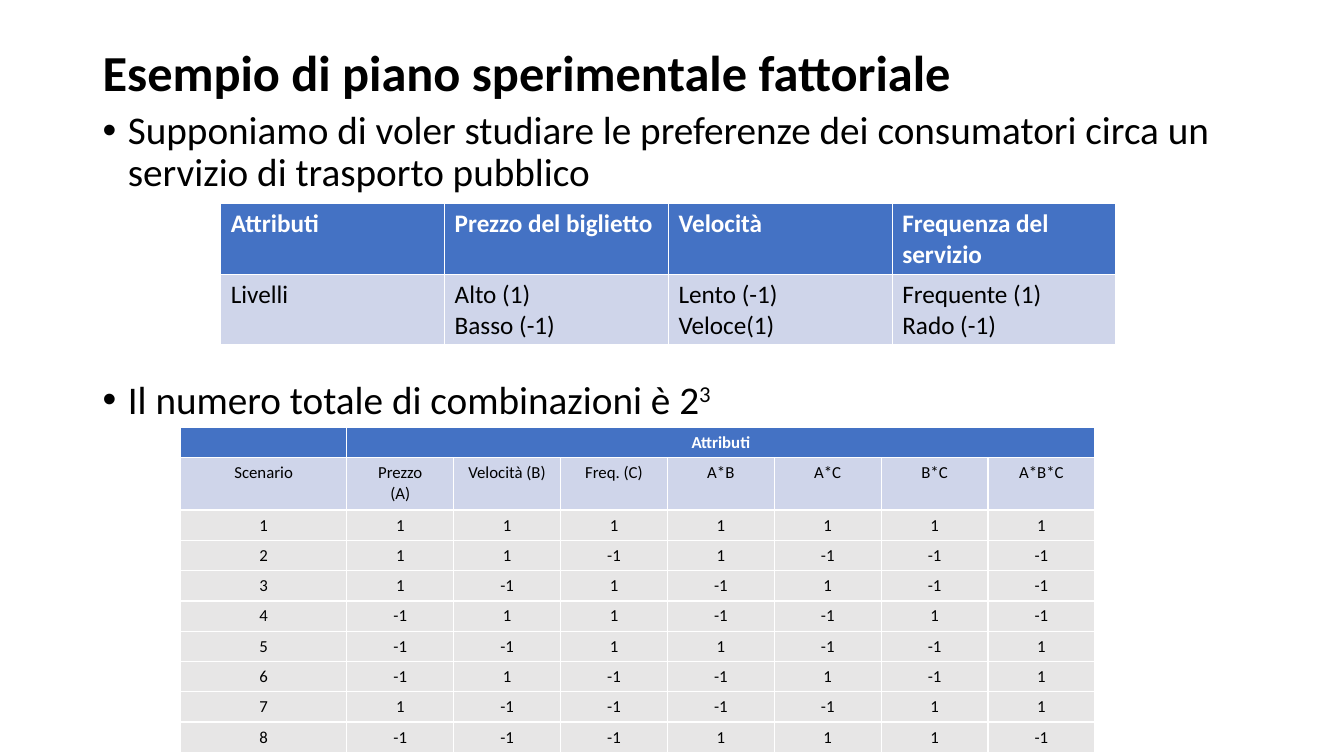
from dataclasses import dataclass

from lxml.etree import SubElement
from pptx import Presentation
from pptx.dml.color import RGBColor
from pptx.enum.text import MSO_ANCHOR, PP_ALIGN
from pptx.oxml.ns import qn
from pptx.util import Pt

EMU_PER_PX = 9144


@dataclass(frozen=True)
class Theme:
    """Colours, font and type sizes of the slide."""
    font: str = "Calibri"
    ink: str = "000000"
    paper: str = "FFFFFF"
    header: str = "4472C4"
    band: str = "CFD5EA"
    plain: str = "E7E6E6"
    title: int = 36
    body: int = 28
    levels: int = 18
    plan: int = 12


class SlideBuilder:
    """Places styled elements on the current slide."""

    def __init__(self, slide, theme):
        self.slide = slide
        self.theme = theme

    def box(self, *px):
        """Turn px lengths into EMU."""
        return [length * EMU_PER_PX for length in px]

    def style(self, paragraph, size, color, bold=False):
        """Format every run of a paragraph."""
        for run in paragraph.runs:
            run.font.name = self.theme.font
            run.font.size = Pt(size)
            run.font.bold = bold
            run.font.color.rgb = RGBColor.from_string(color)

    def text_frame(self, left, top, width, height):
        """Add a wrapping text box and return its frame."""
        frame = self.slide.shapes.add_textbox(*self.box(left, top, width, height)).text_frame
        frame.word_wrap = True
        return frame

    def title(self, text, *place):
        """Add the slide title."""
        frame = self.text_frame(*place)
        frame.vertical_anchor = MSO_ANCHOR.MIDDLE
        frame.text = text
        frame.paragraphs[0].line_spacing = 0.9
        self.style(frame.paragraphs[0], self.theme.title, self.theme.ink, True)

    def bullets(self, items, gap, *place):
        """Add bullets given as text and superscript, set apart by a gap in points."""
        frame = self.text_frame(*place)
        frame.text = "\n".join(text for text, _ in items)
        for index, (paragraph, (_, exponent)) in enumerate(zip(frame.paragraphs, items)):
            paragraph.line_spacing = 0.9
            paragraph.space_before = Pt(gap if index else 0)
            properties = paragraph._p.get_or_add_pPr()
            indent = 25 * EMU_PER_PX
            properties.set("marL", str(indent))
            properties.set("indent", str(-indent))
            SubElement(properties, qn("a:buFont"), typeface="Arial")
            SubElement(properties, qn("a:buChar"), char="•")
            if exponent:
                raised = paragraph.add_run()
                raised.text = exponent
                raised._r.get_or_add_rPr().set("baseline", "30000")
            self.style(paragraph, self.theme.body, self.theme.ink)

    def table(self, rows, left, top, widths, heights, fills, size, align):
        """Add a table with a bold header row and one fill per row."""
        place = self.box(left, top, sum(widths), sum(heights))
        table = self.slide.shapes.add_table(len(rows), len(widths), *place).table
        table.horz_banding = False
        for column, width in zip(table.columns, self.box(*widths)):
            column.width = width
        for row, height in zip(table.rows, self.box(*heights)):
            row.height = height
        for row_index, (values, fill) in enumerate(zip(rows, fills)):
            is_header = row_index == 0
            color = self.theme.paper if is_header else self.theme.ink
            for column_index, value in enumerate(values):
                cell = table.cell(row_index, column_index)
                cell.text = str(value)
                cell.fill.solid()
                cell.fill.fore_color.rgb = RGBColor.from_string(fill)
                for paragraph in cell.text_frame.paragraphs:
                    paragraph.alignment = align
                    self.style(paragraph, size, color, is_header)
                    if not paragraph.runs:
                        SubElement(paragraph._p, qn("a:endParaRPr"), sz=str(size * 100))
        return table


def main():
    """Build the slide and save it."""
    theme = Theme()
    presentation = Presentation()
    presentation.slide_width = 1333 * EMU_PER_PX
    presentation.slide_height = 750 * EMU_PER_PX
    blank_layout = presentation.slide_layouts[6]
    builder = SlideBuilder(presentation.slides.add_slide(blank_layout), theme)

    builder.title("Esempio di piano sperimentale fattoriale", 92, 40, 1150, 70)
    builder.bullets([
        ("Supponiamo di voler studiare le preferenze dei consumatori circa un "
         "servizio di trasporto pubblico", ""),
        ("Il numero totale di combinazioni è 2", "3"),
    ], 132, 92, 105, 1150, 570)

    levels = [
        ("Attributi", "Prezzo del biglietto", "Velocità", "Frequenza del servizio"),
        ("Livelli", "Alto (1)\nBasso (-1)", "Lento (-1)\nVeloce(1)",
         "Frequente (1)\nRado (-1)"),
    ]
    builder.table(levels, 219, 202, [222] * 4, [70] * 2,
                  [theme.header, theme.band], theme.levels, PP_ALIGN.LEFT)

    scenarios = [(1, 1, 1), (1, 1, -1), (1, -1, 1), (-1, 1, 1),
                 (-1, -1, 1), (-1, 1, -1), (1, -1, -1), (-1, -1, -1)]
    plan = [
        ("", "Attributi", "", "", "", "", "", ""),
        ("Scenario", "Prezzo\n(A)", "Velocità (B)", "Freq. (C)",
         "A*B", "A*C", "B*C", "A*B*C"),
    ]
    plan += [(number, a, b, c, a * b, a * c, b * c, a * b * c)
             for number, (a, b, c) in enumerate(scenarios, 1)]
    plan_table = builder.table(
        plan, 179, 424, [165] + [106] * 7, [30, 52] + [30] * len(scenarios),
        [theme.header, theme.band] + [theme.plain] * len(scenarios),
        theme.plan, PP_ALIGN.CENTER)
    plan_table.cell(0, 1).merge(plan_table.cell(0, 7))

    presentation.save("out.pptx")


if __name__ == "__main__":
    main()
